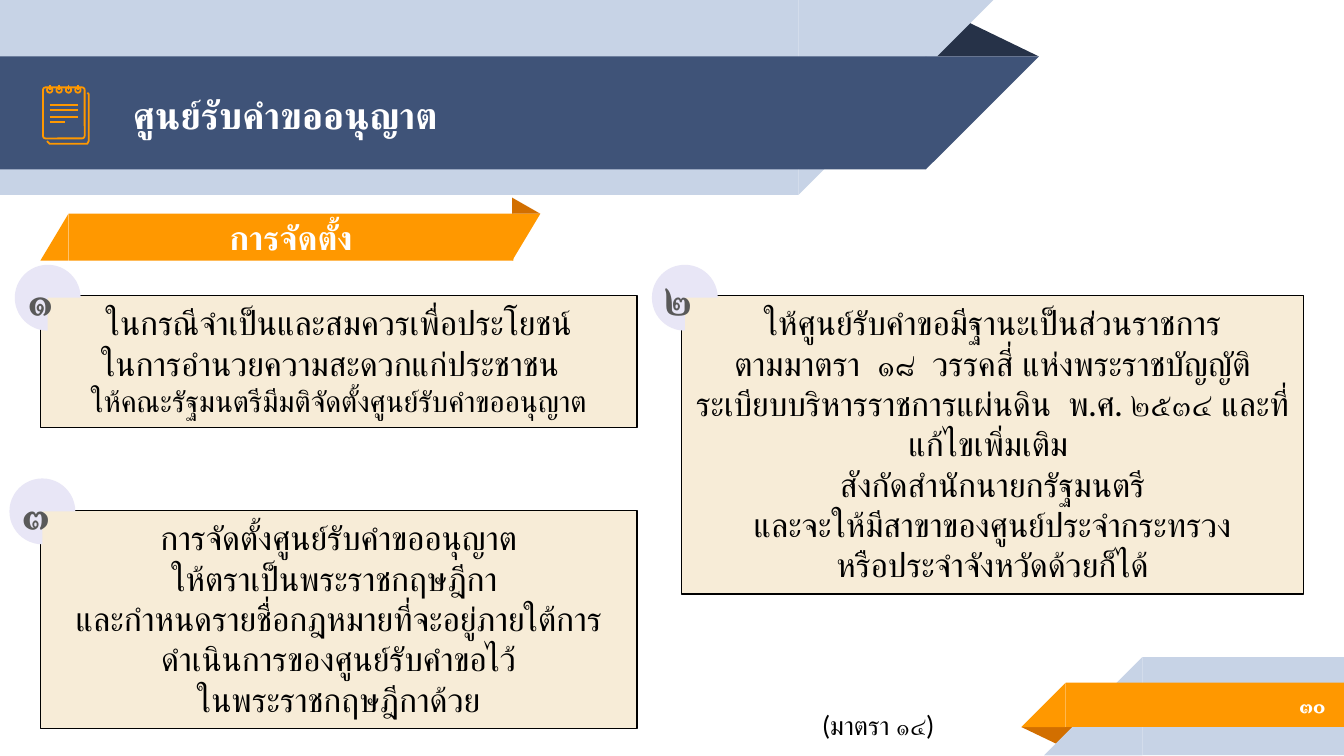
from dataclasses import dataclass
from typing import Optional

from lxml.etree import SubElement
from pptx import Presentation
from pptx.dml.color import RGBColor
from pptx.enum.shapes import MSO_CONNECTOR, MSO_SHAPE
from pptx.enum.text import MSO_ANCHOR, MSO_AUTO_SIZE, PP_ALIGN
from pptx.oxml.ns import qn
from pptx.util import Inches, Pt


@dataclass(frozen=True)
class Theme:
    font: str = "Lato"
    navy: str = "3F5378"
    dark_navy: str = "263248"
    pale_blue: str = "C7D3E6"
    orange: str = "FF9800"
    dark_orange: str = "D26F00"
    cream: str = "F7ECD7"
    lilac: str = "E8E6F6"
    gray: str = "595959"
    black: str = "000000"
    white: str = "FFFFFF"
    title: int = 20
    badge: int = 24
    body: int = 18
    closing: int = 16
    note: int = 14
    number: int = 12
    icon_line: float = 0.96
    card_line: float = 0.75


THEME = Theme()


@dataclass(frozen=True)
class Box:
    left: float
    top: float
    width: float
    height: float

    def lengths(self) -> tuple:
        return tuple(Inches(v) for v in (self.left, self.top, self.width, self.height))


@dataclass(frozen=True)
class Part:
    kind: MSO_SHAPE
    box: Box
    color: str
    flip: bool = False
    rotation: int = 0
    adjustment: Optional[float] = None


@dataclass(frozen=True)
class Card:
    box: Box
    paragraphs: tuple
    closing: str = ""


@dataclass(frozen=True)
class Badge:
    left: float
    top: float
    numeral: str


def draw_part(shapes, part: Part):
    shape = shapes.add_shape(part.kind, *part.box.lengths())
    shape.shadow.inherit = False
    shape.fill.solid()
    shape.fill.fore_color.rgb = RGBColor.from_string(part.color)
    shape.line.fill.background()
    shape.rotation = part.rotation
    if part.flip:
        shape.element.spPr.xfrm.set("flipH", "1")
    if part.adjustment is not None:
        shape.adjustments[0] = part.adjustment
    return shape


def set_text(shape, paragraphs: tuple, size: int, color: str, bold: bool = False,
             align=PP_ALIGN.LEFT, anchor=MSO_ANCHOR.MIDDLE, inset: Optional[float] = None):
    frame = shape.text_frame
    frame.word_wrap = True
    frame.vertical_anchor = anchor
    if inset is not None:
        frame.margin_left = frame.margin_right = Inches(inset)
        frame.margin_top = frame.margin_bottom = Inches(inset)
    for index, text in enumerate(paragraphs):
        paragraph = frame.add_paragraph() if index else frame.paragraphs[0]
        paragraph.text = text
        paragraph.alignment = align
        font = paragraph.font
        font.name, font.size, font.bold = THEME.font, Pt(size), bold
        font.color.rgb = RGBColor.from_string(color)
        # Thai letters take the complex-script typeface
        SubElement(font._element, qn("a:cs"), typeface=THEME.font)
    return frame


def outline(shape) -> None:
    shape.shadow.inherit = False
    shape.fill.background()
    shape.line.color.rgb = RGBColor.from_string(THEME.orange)
    shape.line.width = Pt(THEME.icon_line)


def draw_stroke(shapes, x1: float, y1: float, x2: float, y2: float) -> None:
    line = shapes.add_connector(MSO_CONNECTOR.STRAIGHT, *(Inches(v) for v in (x1, y1, x2, y2)))
    line.line.color.rgb = RGBColor.from_string(THEME.orange)
    line.line.width = Pt(THEME.icon_line)
    SubElement(line.element.spPr, qn("a:effectLst"))


def draw_notepad(shapes) -> None:
    # Back sheet
    points = [(Inches(x), Inches(y)) for x, y in (
        (0.35, 1.05), (0.37, 1.07), (0.65, 1.07), (0.66, 1.05), (0.66, 0.7), (0.65, 0.69))]
    builder = shapes.build_freeform(*points[0])
    builder.add_line_segments(points[1:], close=False)
    outline(builder.convert_to_shape())
    # Front sheet
    sheet = shapes.add_shape(MSO_SHAPE.ROUNDED_RECTANGLE, *Box(0.32, 0.65, 0.31, 0.38).lengths())
    sheet.adjustments[0] = 0.06
    outline(sheet)
    # Rings and their pins
    for index in range(4):
        center = 0.37 + 0.07 * index
        outline(shapes.add_shape(MSO_SHAPE.OVAL, *Box(center - 0.02, 0.65, 0.04, 0.04).lengths()))
        draw_stroke(shapes, center, 0.63, center, 0.67)
    # Written lines
    for y, right in ((0.78, 0.58), (0.82, 0.58), (0.87, 0.58), (0.91, 0.48)):
        draw_stroke(shapes, 0.37, y, right, y)


def draw_card(shapes, card: Card) -> None:
    shape = draw_part(shapes, Part(MSO_SHAPE.RECTANGLE, card.box, THEME.cream))
    shape.line.color.rgb = RGBColor.from_string(THEME.black)
    shape.line.width = Pt(THEME.card_line)
    frame = set_text(shape, card.paragraphs, THEME.body, THEME.black,
                     align=PP_ALIGN.CENTER, anchor=MSO_ANCHOR.TOP)
    frame.auto_size = MSO_AUTO_SIZE.SHAPE_TO_FIT_TEXT
    if card.closing:
        paragraph = frame.paragraphs[-1]
        paragraph.add_line_break()
        run = paragraph.add_run()
        run.text = card.closing
        run.font.size = Pt(THEME.closing)


def draw_badge(shapes, badge: Badge) -> None:
    box = Box(badge.left, badge.top, 0.49, 0.49)
    shape = draw_part(shapes, Part(MSO_SHAPE.PIE, box, THEME.lilac, rotation=90))
    frame = set_text(shape, (badge.numeral,), THEME.badge, THEME.gray, bold=True)
    # Turned text keeps the numeral upright in the rotated pie
    frame._txBody.bodyPr.set("vert", "vert270")


RECTANGLE, CORNER, TRIANGLE = MSO_SHAPE.RECTANGLE, MSO_SHAPE.RIGHT_TRIANGLE, MSO_SHAPE.ISOSCELES_TRIANGLE

HEADER = (
    Part(TRIANGLE, Box(6.88, 0.14, 0.85, 0.28), THEME.dark_navy, adjustment=0.32),
    Part(RECTANGLE, Box(0, 0, 5.94, 1.45), THEME.pale_blue, flip=True, rotation=180),
    Part(CORNER, Box(5.94, 0, 1.45, 1.45), THEME.pale_blue, flip=True, rotation=180),
    Part(RECTANGLE, Box(0, 0.42, 6.89, 0.84), THEME.navy, flip=True, rotation=180),
    Part(CORNER, Box(6.89, 0.42, 0.84, 0.84), THEME.navy, flip=True, rotation=180),
)
FOOTER = (
    Part(TRIANGLE, Box(7.6, 5.41, 0.43, 0.14), THEME.dark_orange, rotation=180, adjustment=0.32),
    Part(RECTANGLE, Box(8.5, 4.89, 1.5, 0.73), THEME.pale_blue, flip=True),
    Part(CORNER, Box(7.77, 4.89, 0.73, 0.73), THEME.pale_blue, flip=True),
    Part(RECTANGLE, Box(7.93, 5.08, 2.08, 0.33), THEME.orange, flip=True),
    Part(CORNER, Box(7.6, 5.08, 0.33, 0.33), THEME.orange, flip=True),
)
RIBBON_ENDS = (
    Part(CORNER, Box(0.3, 1.59, 0.21, 0.35), THEME.orange, flip=True),
    Part(CORNER, Box(3.81, 1.59, 0.21, 0.35), THEME.orange, flip=True, rotation=180),
    Part(TRIANGLE, Box(3.81, 1.47, 0.21, 0.12), THEME.dark_orange, adjustment=0),
)
CARDS = (
    Card(Box(0.3, 2.2, 4.44, 0.98),
         ("ในกรณีจำเป็นและสมควรเพื่อประโยชน์", "ในการอำนวยความสะดวกแก่ประชาชน  "),
         "ให้คณะรัฐมนตรีมีมติจัดตั้งศูนย์รับคำขออนุญาต"),
    Card(Box(5.07, 2.2, 4.63, 2.22),
         ("ให้ศูนย์รับคำขอมีฐานะเป็นส่วนราชการ",
          "ตามมาตรา  ๑๘  วรรคสี่ แห่งพระราชบัญญัติระเบียบบริหารราชการแผ่นดิน  พ.ศ. ๒๕๓๔ และที่แก้ไขเพิ่มเติม ",
          "สังกัดสำนักนายกรัฐมนตรี", "และจะให้มีสาขาของศูนย์ประจำกระทรวง",
          "หรือประจำจังหวัดด้วยก็ได้")),
    Card(Box(0.3, 3.8, 4.44, 1.62),
         ("การจัดตั้งศูนย์รับคำขออนุญาต", "ให้ตราเป็นพระราชกฤษฎีกา ",
          "และกำหนดรายชื่อกฎหมายที่จะอยู่ภายใต้การดำเนินการของศูนย์รับคำขอไว้",
          "ในพระราชกฤษฎีกาด้วย")),
)
BADGES = (Badge(4.85, 1.97, "๒"), Badge(0.11, 1.97, "๑"), Badge(0.07, 3.56, "๓"))


def main() -> None:
    presentation = Presentation()
    # Widescreen, 16 to 9
    presentation.slide_width = Inches(10)
    presentation.slide_height = Inches(10) * 9 // 16
    slide = presentation.slides.add_slide(presentation.slide_layouts[6])
    shapes = slide.shapes

    # Header and footer bands
    for band in (HEADER, FOOTER):
        group = shapes.add_group_shape()
        for part in band:
            draw_part(group.shapes, part)

    # Title and page number
    title = shapes.add_textbox(*Box(0.89, 0.43, 6.11, 0.84).lengths())
    set_text(title, ("ศูนย์รับคำขออนุญาต",), THEME.title, THEME.white, bold=True, inset=0.1)
    number = shapes.add_textbox(*Box(8.33, 5.07, 1.63, 0.35).lengths())
    set_text(number, ("๓๐",), THEME.number, THEME.white, bold=True, align=PP_ALIGN.RIGHT, inset=0.1)

    draw_notepad(shapes.add_group_shape().shapes)

    # Section ribbon
    ribbon = draw_part(shapes, Part(RECTANGLE, Box(0.51, 1.59, 3.31, 0.35), THEME.orange, flip=True))
    set_text(ribbon, ("การจัดตั้ง",), THEME.body, THEME.white, bold=True,
             align=PP_ALIGN.CENTER, inset=0.1)
    for part in RIBBON_ENDS:
        draw_part(shapes, part)

    # Section reference
    reference = shapes.add_textbox(*Box(5.94, 5.23, 1.19, 0.34).lengths())
    frame = set_text(reference, ("(มาตรา ๑๔)",), THEME.note, THEME.black,
                     align=PP_ALIGN.CENTER, anchor=MSO_ANCHOR.TOP)
    frame.word_wrap = False
    frame.auto_size = MSO_AUTO_SIZE.SHAPE_TO_FIT_TEXT

    # Numbered cards
    for card in CARDS:
        draw_card(shapes, card)
    for badge in BADGES:
        draw_badge(shapes, badge)

    presentation.save("out.pptx")


if __name__ == "__main__":
    main()
